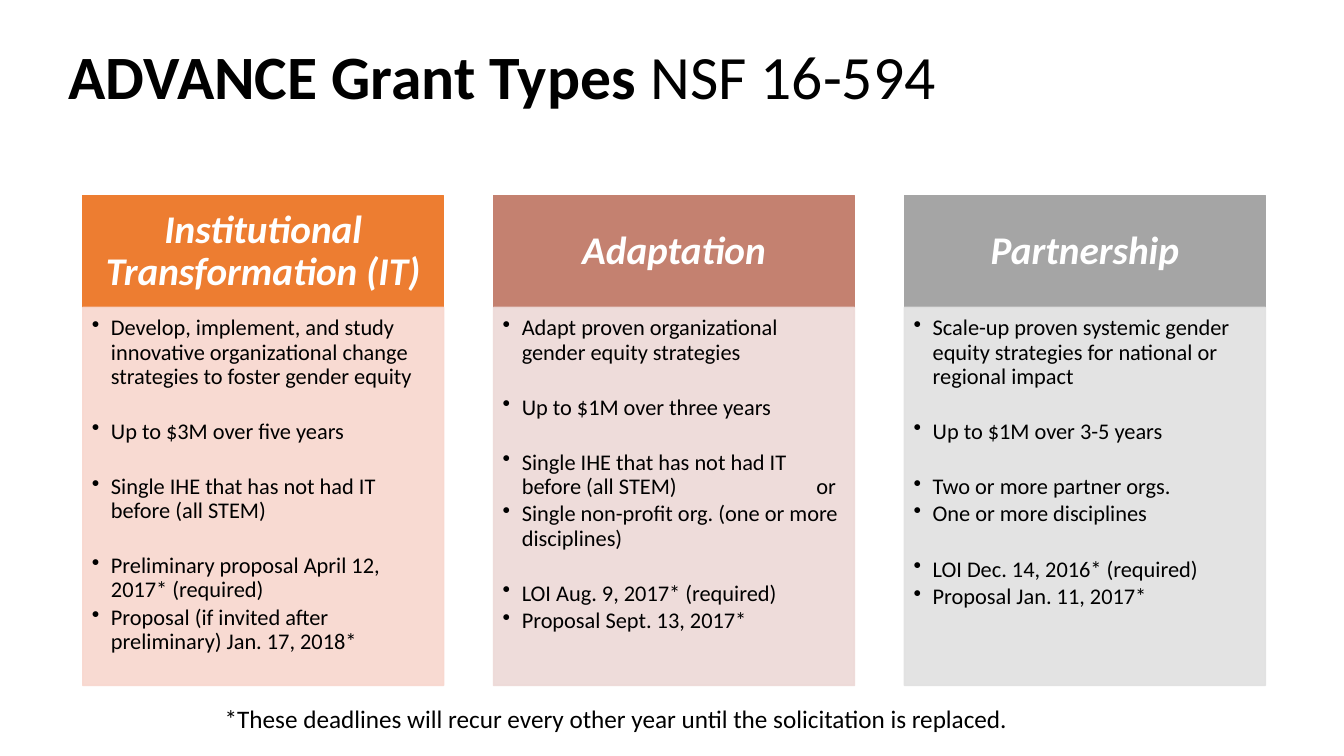
"""Build the slide comparing the three ADVANCE grant types."""
from lxml import etree
from pptx import Presentation
from pptx.dml import color
from pptx.enum import shapes, text
from pptx.oxml import ns
from pptx.util import Inches, Pt

GRANTS = [
    ("Institutional Transformation (IT)", "ED7D31", "F8D7CE", [
        ["Develop, implement, and study innovative organizational change "
         "strategies to foster gender equity"],
        ["Up to $3M over five years"],
        ["Single IHE that has not had IT before (all STEM)"],
        ["Preliminary proposal April 12, 2017* (required)",
         "Proposal (if invited after preliminary) Jan. 17, 2018*"]]),
    ("Adaptation", "C48170", "EDD9D7", [
        ["Adapt proven organizational gender equity strategies"],
        ["Up to $1M over three years"],
        ["Single IHE that has not had IT before (all STEM) \t\tor",
         "Single non-profit org. (one or more disciplines)"],
        ["LOI Aug. 9, 2017* (required)", "Proposal Sept. 13, 2017*"]]),
    ("Partnership", "A5A5A5", "E1E1E1", [
        ["Scale-up proven systemic gender equity strategies for national "
         "or regional impact"],
        ["Up to $1M over 3-5 years"],
        ["Two or more partner orgs.", "One or more disciplines"],
        ["LOI Dec. 14, 2016* (required)", "Proposal Jan. 11, 2017*"]]),
]
LEFT, STEP, WIDTH = 0.82, 4.075, 3.58
HEAD_TOP, HEAD_H, LIST_H = 1.94, 1.11, 3.75


def add_text(p, words, size, hex_color="000000", bold=False, italic=False):
    r = p.add_run()
    r.text = words
    r.font.name, r.font.size = "Calibri", Pt(size)
    r.font.bold, r.font.italic = bold, italic
    r.font.color.rgb = color.RGBColor.from_string(hex_color)


def add_panel(x, y, height, hex_color, margins, anchor, alpha=100):
    sp = slide.shapes.add_shape(shapes.MSO_SHAPE.RECTANGLE, Inches(x),
                                Inches(y), Inches(WIDTH), Inches(height))
    sp.shadow.inherit = False
    sp.line.width = Pt(1)
    for fill in (sp.fill, sp.line.fill):
        fill.solid()
        fill.fore_color.rgb = color.RGBColor.from_string(hex_color)
    if alpha < 100:
        for clr in sp._element.spPr.iter(ns.qn("a:srgbClr")):
            etree.SubElement(clr, ns.qn("a:alpha"), val=str(alpha * 1000))
    tf = sp.text_frame
    tf.word_wrap, tf.vertical_anchor = True, anchor
    (tf.margin_left, tf.margin_top,
     tf.margin_right, tf.margin_bottom) = map(Inches, margins)
    return tf


prs = Presentation()
prs.slide_width, prs.slide_height = Inches(13.33), Inches(7.5)
slide = prs.slides.add_slide(prs.slide_layouts[5])

title = slide.shapes.title
title.left, title.top = Inches(0.58), Inches(0.25)
title.width, title.height = Inches(12.2), Inches(1.08)
tf = title.text_frame
tf.auto_size = text.MSO_AUTO_SIZE.NONE
tf.vertical_anchor = text.MSO_ANCHOR.MIDDLE
p = tf.paragraphs[0]
p.alignment, p.line_spacing = text.PP_ALIGN.LEFT, 0.9
add_text(p, "ADVANCE Grant Types ", 44, bold=True)
add_text(p, "NSF 16-594", 44)

for i, (name, head_color, list_color, groups) in enumerate(GRANTS):
    x = LEFT + i * STEP
    tf = add_panel(x, HEAD_TOP, HEAD_H, head_color,
                   (0.22, 0.12, 0.22, 0.12), text.MSO_ANCHOR.MIDDLE)
    p = tf.paragraphs[0]
    p.alignment, p.line_spacing = text.PP_ALIGN.CENTER, 0.9
    add_text(p, name, 28, "FFFFFF", bold=True, italic=True)

    tf = add_panel(x, HEAD_TOP + HEAD_H, LIST_H, list_color,
                   (0.09, 0.09, 0.12, 0.14), text.MSO_ANCHOR.TOP, alpha=90)
    for g, items in enumerate(groups):
        for n, item in enumerate(items):
            first = g == 0 and n == 0
            p = tf.paragraphs[0] if first else tf.add_paragraph()
            p.alignment, p.line_spacing = text.PP_ALIGN.LEFT, 0.9
            p.space_before = Pt(19.7 if g and n == 0 else 0)
            p.space_after = Pt(2.4)
            pPr = p._p.get_or_add_pPr()
            pPr.set("marL", str(Inches(0.19)))
            pPr.set("indent", str(-Inches(0.19)))
            pPr.set("defTabSz", str(Pt(56)))
            etree.SubElement(pPr, ns.qn("a:buChar"), char="•")
            add_text(p, item, 16)

note = slide.shapes.add_textbox(Inches(2.13), Inches(6.93),
                                Inches(8.54), Inches(0.4))
note.text_frame.word_wrap = True
add_text(note.text_frame.paragraphs[0],
         "*These deadlines will recur every other year until the "
         "solicitation is replaced.", 18)

prs.save("out.pptx")
